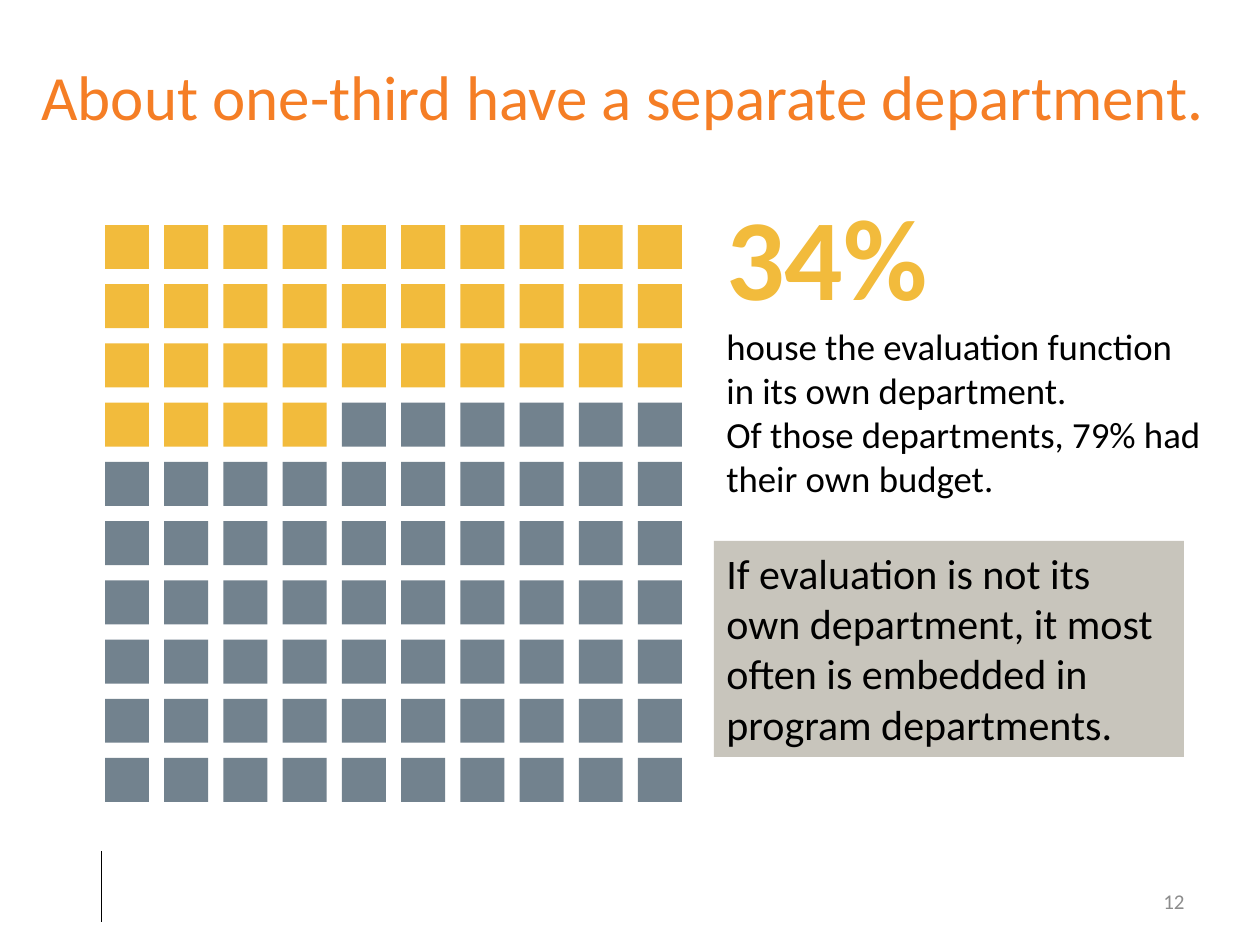
from pptx import Presentation
from pptx.dml.color import RGBColor
from pptx.enum.shapes import MSO_CONNECTOR, MSO_SHAPE
from pptx.enum.text import MSO_ANCHOR, MSO_AUTO_SIZE, PP_ALIGN
from pptx.oxml.ns import qn
from pptx.util import Emu, Pt
from lxml import etree

RECTANGLE = MSO_SHAPE.RECTANGLE
STRAIGHT = MSO_CONNECTOR.STRAIGHT
TOP, MIDDLE = MSO_ANCHOR.TOP, MSO_ANCHOR.MIDDLE
LEFT, CENTER, RIGHT = PP_ALIGN.LEFT, PP_ALIGN.CENTER, PP_ALIGN.RIGHT

THEME = {
    "font": "Calibri",
    "orange": RGBColor(0xF5, 0x7E, 0x25),
    "yellow": RGBColor(0xF2, 0xBB, 0x3C),
    "slate": RGBColor(0x72, 0x82, 0x8E),
    "stone": RGBColor(0xC8, 0xC5, 0xBC),
    "gray": RGBColor(0x8C, 0x8C, 0x8C),
    "black": RGBColor(0, 0, 0),
    "title": Pt(36),
    "figure": Pt(66),
    "body": Pt(21),
    "callout": Pt(24),
    "number": Pt(12),
}


def px(*lengths):
    return [Emu(round(length * 914400 / 126)) for length in lengths]


def write(shape, lines, align=LEFT, anchor=TOP):
    """Fill a shape with (text, size, color, bold) lines."""
    frame = shape.text_frame
    frame.word_wrap = True
    frame.auto_size = MSO_AUTO_SIZE.NONE
    frame.vertical_anchor = anchor
    for index, (text, size, color, bold) in enumerate(lines):
        para = frame.add_paragraph() if index else frame.paragraphs[0]
        para.alignment = align
        span = para.add_run()
        span.text = text
        formats = {"name": THEME["font"], "size": THEME[size], "bold": bold}
        for name, value in formats.items():
            setattr(span.font, name, value)
        span.font.color.rgb = THEME[color]


deck = Presentation()
deck.slide_width, deck.slide_height = px(1260, 945)
page = deck.slides.add_slide(deck.slide_layouts[5])
shapes = page.shapes

# Footer rule
x, top, bottom = px(101, 851, 922)
rule = shapes.add_connector(STRAIGHT, x, top, x, bottom)
rule.line.color.rgb = THEME["black"]
rule.line.width = Pt(0.5)
etree.SubElement(rule._element.spPr, qn("a:effectLst"))

# Title
title = shapes.title
title.left, title.top, title.width, title.height = px(0, 23, 1260, 145)
write(title, [("About one-third have a separate department. ", "title", "orange", False)],
      CENTER, MIDDLE)

# Grid of one hundred squares, one per percent
PERCENT, COLUMNS = 34, 10
GRID_LEFT, GRID_TOP, SQUARE = 105, 225, 44
PITCH = 533 / (COLUMNS - 1)
for index in range(100):
    row, column = divmod(index, COLUMNS)
    square = shapes.add_shape(RECTANGLE, *px(
        GRID_LEFT + column * PITCH, GRID_TOP + row * PITCH, SQUARE, SQUARE))
    square.shadow.inherit = False
    square.fill.solid()
    square.fill.fore_color.rgb = THEME["yellow" if index < PERCENT else "slate"]
    square.line.fill.background()

# Key figure and explanation
finding = shapes.add_textbox(*px(714, 179, 504, 373))
write(finding, [
    ("34%", "figure", "yellow", True),
    ("house the evaluation function in its own department.", "body", "black", False),
    ("Of those departments, 79% had their own budget.", "body", "black", False),
])

# Slide number
number = shapes.add_textbox(*px(903, 876, 294, 50))
write(number, [("12", "number", "gray", False)], RIGHT, MIDDLE)

# Callout
callout = shapes.add_shape(RECTANGLE, *px(714, 541, 470, 216))
callout.shadow.inherit = False
callout.fill.solid()
callout.fill.fore_color.rgb = THEME["stone"]
callout.line.fill.background()
write(callout, [(
    "If evaluation is not its own department, it most often is embedded in "
    "program departments.", "callout", "black", False)])

deck.save("out.pptx")
